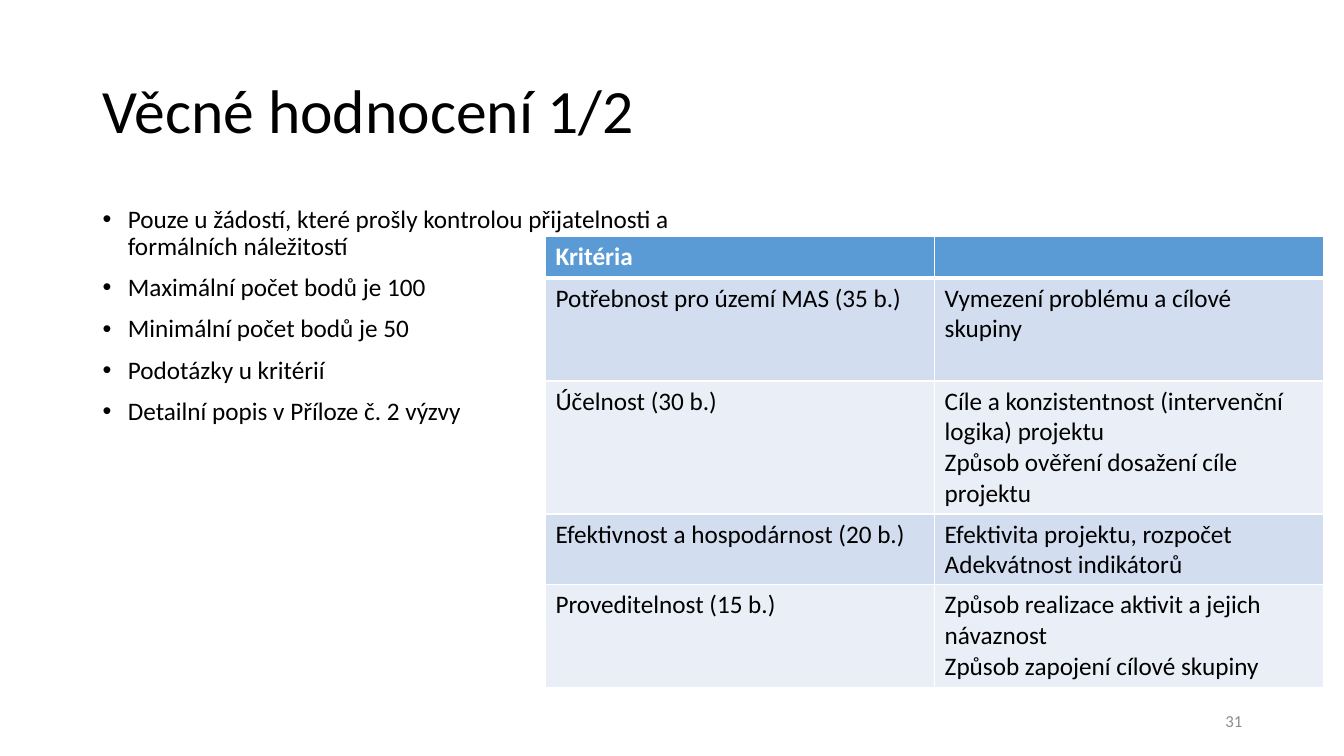
from lxml import etree
from pptx import Presentation
from pptx.dml.color import RGBColor
from pptx.enum.text import MSO_ANCHOR, PP_ALIGN
from pptx.oxml.ns import qn
from pptx.util import Inches, Pt

MIDDLE, TOP = MSO_ANCHOR.MIDDLE, MSO_ANCHOR.TOP
LEFT, RIGHT = PP_ALIGN.LEFT, PP_ALIGN.RIGHT

# Content
TITLE = "Věcné hodnocení 1/2"
BULLETS = [
    "Pouze u žádostí, které prošly kontrolou přijatelnosti a formálních náležitostí",
    "Maximální počet bodů je 100",
    "Minimální počet bodů je 50",
    "Podotázky u kritérií",
    "Detailní popis v Příloze č. 2 výzvy",
]
PAGE_NUMBER = "31"
# Row height, criterion, lines of the second column
CRITERIA = [
    (0.41, "Kritéria", []),
    (1.02, "Potřebnost pro území MAS (35 b.)", ["Vymezení problému a cílové skupiny"]),
    (1.32, "Účelnost (30 b.)", ["Cíle a konzistentnost (intervenční logika) projektu",
                                "Způsob ověření dosažení cíle projektu"]),
    (0.7, "Efektivnost a hospodárnost (20 b.)", ["Efektivita projektu, rozpočet",
                                                 "Adekvátnost indikátorů"]),
    (1.02, "Proveditelnost (15 b.)", ["Způsob realizace aktivit a jejich návaznost",
                                      "Způsob zapojení cílové skupiny"]),
]

# Style
FONT = "Calibri"
BLACK = RGBColor(0x00, 0x00, 0x00)
WHITE = RGBColor(0xFF, 0xFF, 0xFF)
GREY = RGBColor(0x8C, 0x8C, 0x8C)
HEADER_BLUE = RGBColor(0x5B, 0x9B, 0xD5)
BANDS = [RGBColor(0xEA, 0xEF, 0xF7), RGBColor(0xD2, 0xDE, 0xEF)]
COLUMN_WIDTH = 3.86


def write(frame, lines, size, color, bold=False, align=LEFT):
    for index, line in enumerate(lines):
        para = frame.paragraphs[0] if index == 0 else frame.add_paragraph()
        para.alignment = align
        span = para.add_run()
        span.text = line
        span.font.name = FONT
        span.font.size = Pt(size)
        span.font.bold = bold
        span.font.color.rgb = color


def add_text(page, area, lines, size, color, anchor=MIDDLE, align=LEFT):
    frame = page.shapes.add_textbox(*map(Inches, area)).text_frame
    frame.word_wrap = True
    frame.vertical_anchor = anchor
    write(frame, lines, size, color, align=align)
    return frame


def add_bullet(para):
    para.line_spacing = 0.9
    para.space_before = Pt(10)
    props = para._p.get_or_add_pPr()
    props.set("marL", str(Inches(0.25)))
    props.set("indent", str(Inches(-0.25)))
    etree.SubElement(props, qn("a:buFont")).set("typeface", "Arial")
    etree.SubElement(props, qn("a:buChar")).set("char", "•")


def set_borders(cell, widths):
    props = cell._tc.get_or_add_tcPr()
    for index, (side, width) in enumerate(widths.items()):
        line = etree.Element(qn("a:" + side), w=str(Pt(width)))
        fill = etree.SubElement(line, qn("a:solidFill"))
        etree.SubElement(fill, qn("a:srgbClr")).set("val", str(WHITE))
        props.insert(index, line)


def add_criteria_table(page):
    height = sum(row[0] for row in CRITERIA)
    table = page.shapes.add_table(len(CRITERIA), 2, Inches(5.41), Inches(2.35),
                                  Inches(2 * COLUMN_WIDTH), Inches(height)).table
    for column in table.columns:
        column.width = Inches(COLUMN_WIDTH)
    for index, (row_height, criterion, details) in enumerate(CRITERIA):
        table.rows[index].height = Inches(row_height)
        header = index == 0
        for cell, lines in zip(table.rows[index].cells, ([criterion], details)):
            cell.fill.solid()
            cell.fill.fore_color.rgb = HEADER_BLUE if header else BANDS[index % 2]
            write(cell.text_frame, lines, 18, WHITE if header else BLACK, bold=header)
            set_borders(cell, {"lnL": 1, "lnR": 1, "lnT": 3 if index == 1 else 1,
                               "lnB": 3 if header else 1})


def main():
    deck = Presentation()
    deck.slide_width, deck.slide_height = Inches(13.33), Inches(7.5)
    page = deck.slides.add_slide(deck.slide_layouts[6])

    # Title
    title = add_text(page, (0.92, 0.4, 11.5, 1.45), [TITLE], 44, BLACK)
    title.paragraphs[0].line_spacing = 0.9

    # Bullets, flowing in two columns
    body = add_text(page, (0.92, 2, 11.5, 4.76), BULLETS, 18, BLACK, anchor=TOP)
    body._txBody.bodyPr.set("numCol", "2")
    for para in body.paragraphs:
        add_bullet(para)

    # Page number
    add_text(page, (9.42, 6.95, 3, 0.4), [PAGE_NUMBER], 12, GREY, align=RIGHT)

    # Criteria table
    add_criteria_table(page)

    deck.save("out.pptx")


if __name__ == "__main__":
    main()
